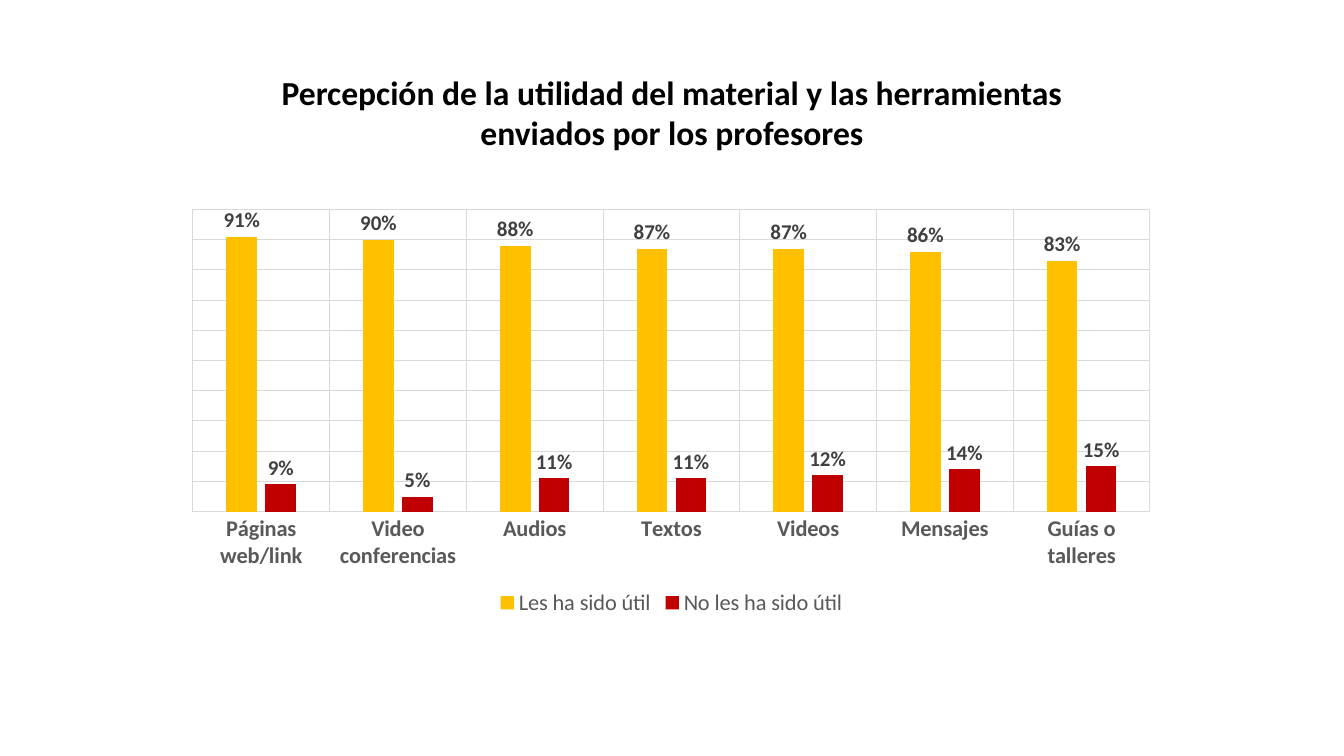
from lxml.etree import SubElement
from pptx import Presentation
from pptx.chart.data import CategoryChartData
from pptx.dml.color import RGBColor
from pptx.enum.chart import XL_CHART_TYPE, XL_LABEL_POSITION, XL_LEGEND_POSITION, XL_TICK_MARK
from pptx.enum.text import MSO_ANCHOR, MSO_AUTO_SIZE, PP_ALIGN
from pptx.oxml.ns import qn
from pptx.util import Emu, Pt

BLACK = RGBColor(0x00, 0x00, 0x00)
AXIS_GRAY = RGBColor(0x59, 0x59, 0x59)
LABEL_GRAY = RGBColor(0x40, 0x40, 0x40)
GRID_GRAY = RGBColor(0xD9, 0xD9, 0xD9)
YELLOW = RGBColor(0xFF, 0xC0, 0x00)
RED = RGBColor(0xC0, 0x00, 0x00)

TITLE = "Percepción de la utilidad del material y las herramientas enviados por los profesores"
CATEGORIES = ["Páginas web/link", "Video conferencias", "Audios", "Textos",
              "Videos", "Mensajes", "Guías o talleres"]
SERIES = [
    ("Les ha sido útil", YELLOW, [0.91, 0.9, 0.88, 0.87, 0.87, 0.86, 0.83]),
    ("No les ha sido útil", RED, [0.09, 0.05, 0.11, 0.11, 0.12, 0.14, 0.15]),
]
PERCENT = "0%"


def px(length):
    return Emu(round(length * 914400 / 100.8))


class SlideBuilder:
    font_name = "Calibri"

    def __init__(self, presentation):
        self.slide = presentation.slides.add_slide(presentation.slide_layouts[5])

    def style_font(self, font, size, color, bold=False):
        font.name = self.font_name
        font.size = Pt(size)
        font.bold = bold
        font.color.rgb = color

    def style_line(self, line):
        line.color.rgb = GRID_GRAY
        line.width = Pt(0.75)

    def title(self, text, left, top, width, height):
        shape = self.slide.shapes.title
        shape.left, shape.top, shape.width, shape.height = map(px, (left, top, width, height))
        frame = shape.text_frame
        frame.text = text
        frame.word_wrap = True
        frame.auto_size = MSO_AUTO_SIZE.NONE
        frame.vertical_anchor = MSO_ANCHOR.TOP
        paragraph = frame.paragraphs[0]
        paragraph.alignment = PP_ALIGN.CENTER
        self.style_font(paragraph.font, 24, BLACK, True)

    def column_chart(self, categories, series_rows, left, top, width, height):
        data = CategoryChartData(number_format=PERCENT)
        data.categories = categories
        for name, _, values in series_rows:
            data.add_series(name, values)
        chart = self.slide.shapes.add_chart(
            XL_CHART_TYPE.COLUMN_CLUSTERED, *map(px, (left, top, width, height)), data).chart
        self.style_font(chart.font, 10, BLACK)
        chart.has_title = False
        chart.has_legend = True
        chart.legend.position = XL_LEGEND_POSITION.BOTTOM
        chart.legend.include_in_layout = False
        self.style_font(chart.legend.font, 16, AXIS_GRAY)
        self.axes(chart)
        plot = chart.plots[0]
        plot.gap_width = 219
        plot.overlap = -27
        plot.vary_by_categories = False
        for series, (_, color, _) in zip(plot.series, series_rows):
            self.series(series, color)
        self.plot_layout(chart, x=0.02, y=0.02, w=0.96, h=0.72)

    def axes(self, chart):
        category_axis = chart.category_axis
        category_axis.major_tick_mark = XL_TICK_MARK.NONE
        category_axis.minor_tick_mark = XL_TICK_MARK.NONE
        self.style_font(category_axis.tick_labels.font, 16, AXIS_GRAY, True)
        self.style_line(category_axis.format.line)
        value_axis = chart.value_axis
        value_axis.minimum_scale = 0
        value_axis.maximum_scale = 1
        value_axis.major_unit = 0.1
        value_axis.tick_labels.number_format = PERCENT
        value_axis.tick_labels.number_format_is_linked = False
        value_axis.visible = False
        for axis in (category_axis, value_axis):
            axis.has_major_gridlines = True
            self.style_line(axis.major_gridlines.format.line)

    def series(self, series, color):
        series.invert_if_negative = False
        series.format.fill.solid()
        series.format.fill.fore_color.rgb = color
        labels = series.data_labels
        labels.show_value = True
        labels.number_format = PERCENT
        labels.number_format_is_linked = False
        labels.position = XL_LABEL_POSITION.OUTSIDE_END
        self.style_font(labels.font, 15, LABEL_GRAY, True)

    def plot_layout(self, chart, **fractions):
        plot_area = chart.element.find(".//" + qn("c:plotArea"))
        for layout in plot_area.findall(qn("c:layout")):
            plot_area.remove(layout)
        layout = SubElement(plot_area, qn("c:layout"))
        plot_area.insert(0, layout)
        manual = SubElement(layout, qn("c:manualLayout"))
        settings = {"layoutTarget": "inner", "xMode": "edge", "yMode": "edge", **fractions}
        for tag, value in settings.items():
            SubElement(manual, qn("c:" + tag)).set("val", str(value))


def main():
    presentation = Presentation()
    presentation.slide_width = px(1344)
    presentation.slide_height = px(756)
    builder = SlideBuilder(presentation)
    builder.title(TITLE, 220, 67, 904, 92)
    builder.column_chart(CATEGORIES, SERIES, 173, 201, 997, 420)
    presentation.save("out.pptx")


if __name__ == "__main__":
    main()
